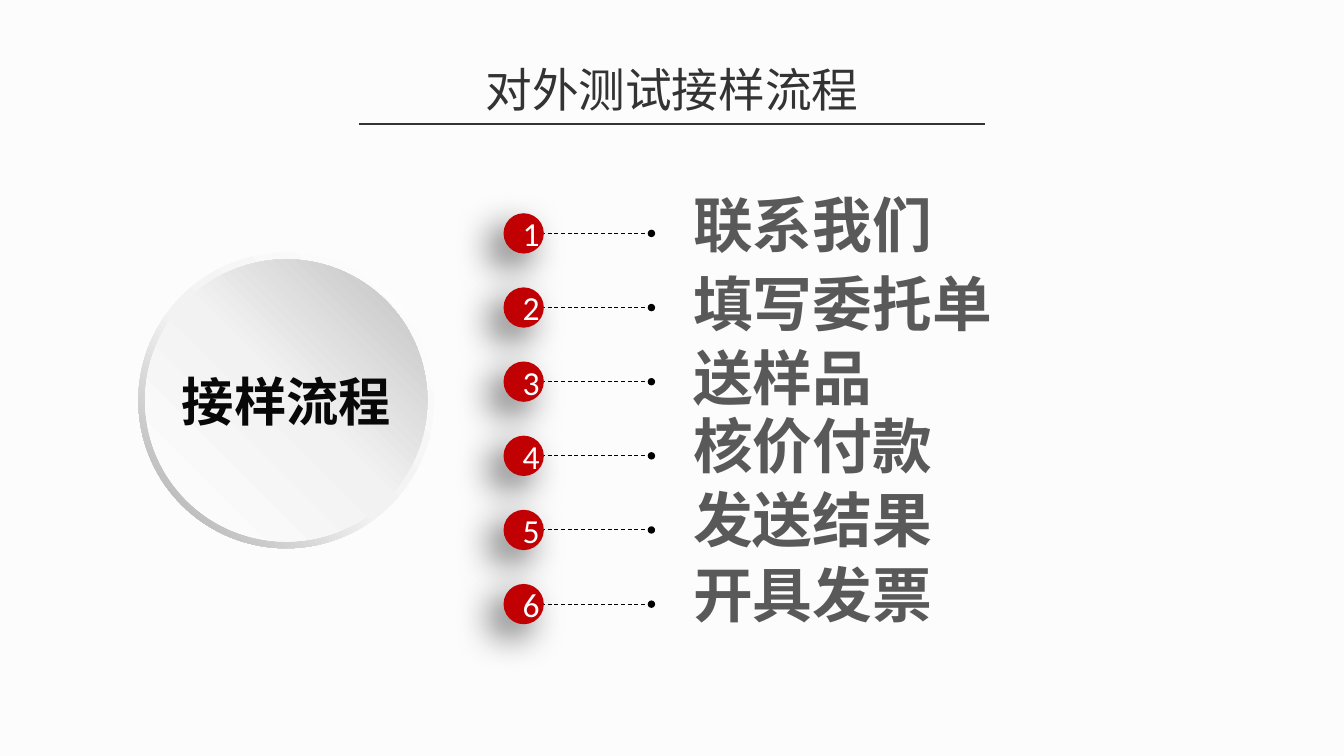
from collections import namedtuple
from dataclasses import dataclass

from lxml import etree
from pptx import Presentation
from pptx.dml.color import RGBColor
from pptx.enum import dml, shapes, text
from pptx.oxml import ns
from pptx.util import Inches, Pt

Box = namedtuple("Box", "x y w h")
CELL = 0.1
COLS, ROWS = 100, 56.25


@dataclass(frozen=True)
class Theme:
    font: str = "Calibri"
    page: str = "FCFCFC"
    title: str = "333333"
    hub: str = "080808"
    label: str = "595959"
    badge: str = "C00002"
    number: str = "FFFFFF"
    line: str = "000000"
    ring: tuple = ((0, "FFFFFF"), (55, "F2F2F2"), (100, "A6A6A6"))
    disc: tuple = ((0, "FFFFFF"), (51, "F2F2F2"), (100, "BFBFBF"))
    title_size: int = 25
    hub_size: int = 28
    label_size: int = 32
    number_size: int = 18
    leading: int = 13


THEME = Theme()


def grid(*cells):
    return [Inches(c * CELL) for c in cells]


def add_xml(parent, tag, **attrs):
    return etree.SubElement(parent, ns.qn(tag), {k: str(v) for k, v in attrs.items()})


def add_run(p, words, size, color, bold=False):
    r = p.add_run()
    r.text = words
    r.font.name = THEME.font
    r.font.size = Pt(size)
    r.font.bold = bold
    r.font.color.rgb = RGBColor.from_string(color)


def add_text(s, box, words, size, color, bold=False, align=text.PP_ALIGN.CENTER,
             inset=True, leading=None):
    tf = s.shapes.add_textbox(*grid(*box)).text_frame
    tf.word_wrap = True
    tf.auto_size = text.MSO_AUTO_SIZE.SHAPE_TO_FIT_TEXT
    if not inset:
        tf.margin_left = tf.margin_right = tf.margin_top = tf.margin_bottom = 0
    p = tf.paragraphs[0]
    p.alignment = align
    if leading:
        p.line_spacing = Pt(leading)
    add_run(p, words, size, color, bold)


def add_line(s, x1, x2, y, color, width):
    line = s.shapes.add_connector(shapes.MSO_CONNECTOR.STRAIGHT, *grid(x1, y, x2, y))
    line.line.color.rgb = RGBColor.from_string(color)
    line.line.width = Pt(width)
    add_xml(line._element.spPr, "a:effectLst")
    return line


def add_plain(parent, kind, box):
    sp = parent.shapes.add_shape(kind, *grid(*box))
    sp.shadow.inherit = False
    sp.fill.background()
    sp.line.fill.background()
    return sp


def set_gradient(sp, stops, angle):
    props = sp._element.spPr
    grad = etree.Element(ns.qn("a:gradFill"), rotWithShape="1")
    stop_list = add_xml(grad, "a:gsLst")
    for share, color in stops:
        stop = add_xml(stop_list, "a:gs", pos=share * 1000)
        add_xml(stop, "a:srgbClr", val=color)
    add_xml(grad, "a:lin", ang=angle * 60000, scaled=0)
    props.replace(props.find(ns.qn("a:noFill")), grad)


def set_shadow(sp, color, opacity, blur, distance, angle):
    effects = sp._element.spPr.find(ns.qn("a:effectLst"))
    shadow = add_xml(effects, "a:outerShdw", blurRad=Pt(blur), dist=Pt(distance),
                     dir=angle * 60000, algn="tr", rotWithShape=0)
    tone = add_xml(shadow, "a:srgbClr", val=color)
    add_xml(tone, "a:alpha", val=opacity * 1000)


def draw_title(s, box, words):
    side = (box.w - 37) / 2
    add_text(s, Box(box.x + side, box.y, 37, box.h), words, THEME.title_size, THEME.title)
    add_line(s, box.x, box.x + box.w, box.y + box.h, THEME.title, 0.75)


def draw_hub(s, box, words):
    rim = 0.5
    group = s.shapes.add_group_shape()
    ring = add_plain(group, shapes.MSO_SHAPE.DONUT, box)
    ring.adjustments[0] = 0.049
    set_gradient(ring, THEME.ring, 135)
    inner = Box(box.x + rim, box.y + rim, box.w - 2 * rim, box.h - 2 * rim)
    disc = add_plain(group, shapes.MSO_SHAPE.OVAL, inner)
    set_gradient(disc, THEME.disc, 315)
    add_text(s, Box(box.x + 2.4, box.y + 8.7, 17.2, 4.7), words, THEME.hub_size,
             THEME.hub, bold=True, inset=False)


def draw_step(s, box, number, words, drop):
    middle = box.y + box.h / 2
    line = add_line(s, box.x + 2.3, box.x + 11, middle, THEME.line, 0.5)
    line.line.dash_style = dml.MSO_LINE.DASH
    add_xml(line.line._get_or_add_ln(), "a:tailEnd", type="oval", w="sm", len="sm")
    badge = add_plain(s, shapes.MSO_SHAPE.OVAL, Box(box.x, box.y, box.h, box.h))
    badge.fill.solid()
    badge.fill.fore_color.rgb = RGBColor.from_string(THEME.badge)
    set_shadow(badge, THEME.line, 60, 20, 10, 135)
    tf = badge.text_frame
    tf.vertical_anchor = text.MSO_ANCHOR.MIDDLE
    p = tf.paragraphs[0]
    p.alignment = text.PP_ALIGN.CENTER
    add_run(p, str(number), THEME.number_size, THEME.number)
    add_text(s, Box(box.x + 14.1, middle + drop, box.w - 14.1, 1.8), words,
             THEME.label_size, THEME.label, bold=True, align=text.PP_ALIGN.JUSTIFY,
             inset=False, leading=THEME.leading)


def draw_steps(s, box, steps):
    pitch = box.h / len(steps)
    for i, (words, drop) in enumerate(steps):
        draw_step(s, Box(box.x, box.y + i * pitch, box.w, 3), i + 1, words, drop)


def main():
    prs = Presentation()
    prs.slide_width, prs.slide_height = grid(COLS, ROWS)
    s = prs.slides.add_slide(prs.slide_layouts[6])
    s.background.fill.solid()
    s.background.fill.fore_color.rgb = RGBColor.from_string(THEME.page)
    draw_title(s, Box(26.7, 4.03, 46.6, 5.2), "对外测试接样流程")
    draw_hub(s, Box(10.3, 18.8, 22, 22), "接样流程")
    draw_steps(s, Box(37.47, 15.87, 51, 33.1), (
        ("联系我们", 0.1),
        ("填写委托单", 0.5),
        ("送样品", 0.5),
        ("核价付款", 0),
        ("发送结果", 0),
        ("开具发票", 0.1),
    ))
    prs.save("out.pptx")


if __name__ == "__main__":
    main()
